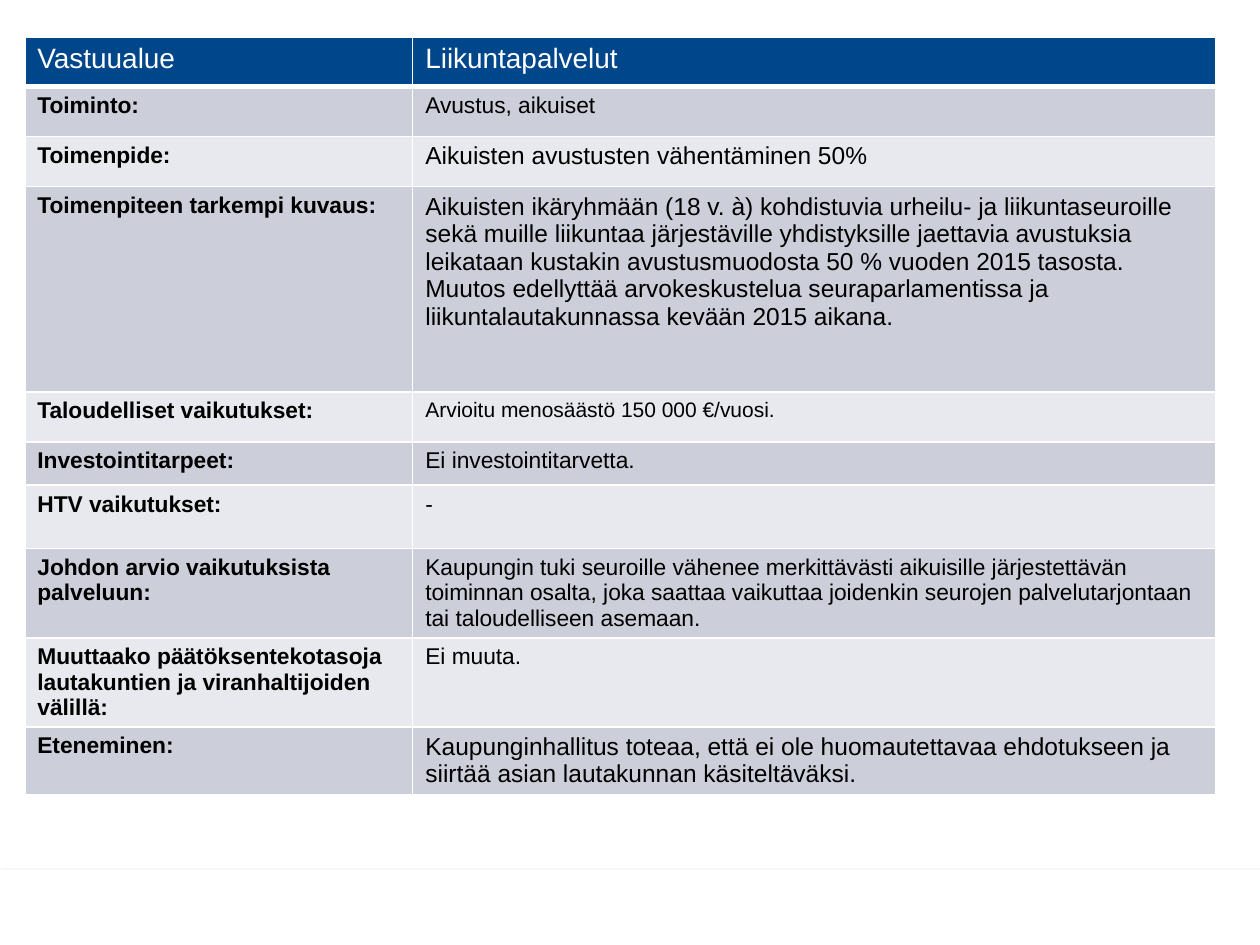
from dataclasses import dataclass

from lxml import etree
from pptx import Presentation
from pptx.dml.color import RGBColor
from pptx.enum.shapes import MSO_SHAPE
from pptx.oxml import parse_xml
from pptx.oxml.ns import qn
from pptx.util import Cm, Pt

RECTANGLE = MSO_SHAPE.RECTANGLE
FONT = "Arial"
WHITE, BLACK, NAVY = "FFFFFF", "000000", "00468B"
BANDS = ("CCCFDA", "E7E9EE")
BLANK_LAYOUT = 6
LABEL_SIZE = 13
HEADER_SIZE = 16
DRAWING_NS = "http://schemas.openxmlformats.org/drawingml/2006/main"


@dataclass
class Topic:
    label: str
    details: tuple[str, ...]
    height: float
    size: int = 13


HEADER = Topic("Vastuualue", ("Liikuntapalvelut",), 0.99, HEADER_SIZE)
TOPICS = [
    Topic("Toiminto:", ("Avustus, aikuiset",), 1.01),
    Topic("Toimenpide:", ("Aikuisten avustusten vähentäminen 50%",), 1.01, 14),
    Topic("Toimenpiteen tarkempi kuvaus:", (
        "Aikuisten ikäryhmään (18 v. à) kohdistuvia urheilu- ja liikuntaseuroille "
        "sekä muille liikuntaa järjestäville yhdistyksille jaettavia avustuksia "
        "leikataan kustakin avustusmuodosta 50 % vuoden 2015 tasosta.",
        "Muutos edellyttää arvokeskustelua seuraparlamentissa ja "
        "liikuntalautakunnassa kevään 2015 aikana."), 4.14, 14),
    Topic("Taloudelliset vaikutukset:", ("Arvioitu menosäästö 150 000 €/vuosi.",), 1.01, 12),
    Topic("Investointitarpeet:", ("Ei investointitarvetta.",), 0.87),
    Topic("HTV vaikutukset:", ("-",), 1.28),
    Topic("Johdon arvio vaikutuksista palveluun:", (
        "Kaupungin tuki seuroille vähenee merkittävästi aikuisille järjestettävän "
        "toiminnan osalta, joka saattaa vaikuttaa joidenkin seurojen "
        "palvelutarjontaan tai taloudelliseen asemaan.",), 1.8),
    Topic("Muuttaako päätöksentekotasoja lautakuntien ja viranhaltijoiden välillä:",
          ("Ei muuta.",), 1.79),
    Topic("Eteneminen:", (
        "Kaupunginhallitus toteaa, että ei ole huomautettavaa ehdotukseen ja "
        "siirtää asian lautakunnan käsiteltäväksi.",), 1.35, 14),
]


def rgb(color: str) -> RGBColor:
    return RGBColor.from_string(color)


def set_borders(cell, bottom: float = 1) -> None:
    properties = cell._tc.get_or_add_tcPr()
    for side, width in (("L", 1), ("R", 1), ("T", 1), ("B", bottom)):
        line = etree.SubElement(properties, qn(f"a:ln{side}"), w=str(Pt(width)))
        fill = etree.SubElement(line, qn("a:solidFill"))
        etree.SubElement(fill, qn("a:srgbClr"), val=WHITE)


def write_cell(cell, paragraphs: tuple[str, ...], size: int, color: str,
               fill: str, bold: bool = False, bottom: float = 1) -> None:
    set_borders(cell, bottom)
    cell.fill.solid()
    cell.fill.fore_color.rgb = rgb(fill)
    cell.text_frame.text = "\n".join(paragraphs)
    for paragraph in cell.text_frame.paragraphs:
        font = paragraph.font
        font.name, font.size, font.bold = FONT, Pt(size), bold
        font.color.rgb = rgb(color)


def add_footer_band(slide) -> None:
    band = slide.shapes.add_shape(RECTANGLE, 0, Cm(17.53), Cm(25.4), Cm(1.52))
    band.fill.solid()
    band.fill.fore_color.rgb = rgb(WHITE)
    band.line.fill.background()
    band._element.spPr.append(parse_xml(
        f'<a:effectLst xmlns:a="{DRAWING_NS}">'
        f'<a:outerShdw blurRad="{Pt(3.1)}" dist="{Pt(1.8)}" dir="5400000" rotWithShape="0">'
        f'<a:srgbClr val="{BLACK}"><a:alpha val="35000"/></a:srgbClr>'
        '</a:outerShdw></a:effectLst>'))


def add_topic_table(slide) -> None:
    rows = [HEADER, *TOPICS]
    widths = (7.82, 16.18)
    table = slide.shapes.add_table(
        len(rows), len(widths), Cm(0.5), Cm(0.75),
        Cm(sum(widths)), Cm(sum(row.height for row in rows))).table
    for column, width in zip(table.columns, widths):
        column.width = Cm(width)
    for row, topic in zip(table.rows, rows):
        row.height = Cm(topic.height)

    # Header row
    for column, text in enumerate((HEADER.label, *HEADER.details)):
        write_cell(table.cell(0, column), (text,), HEADER.size, WHITE, NAVY, bottom=3)

    # Topic rows in alternating bands
    for index, topic in enumerate(TOPICS):
        fill = BANDS[index % len(BANDS)]
        write_cell(table.cell(index + 1, 0), (topic.label,), LABEL_SIZE, BLACK, fill, bold=True)
        write_cell(table.cell(index + 1, 1), topic.details, topic.size, BLACK, fill)


def main() -> None:
    presentation = Presentation()
    presentation.slide_width, presentation.slide_height = Cm(25.4), Cm(19.05)
    slide = presentation.slides.add_slide(presentation.slide_layouts[BLANK_LAYOUT])
    add_footer_band(slide)
    add_topic_table(slide)
    presentation.save("out.pptx")


if __name__ == "__main__":
    main()
